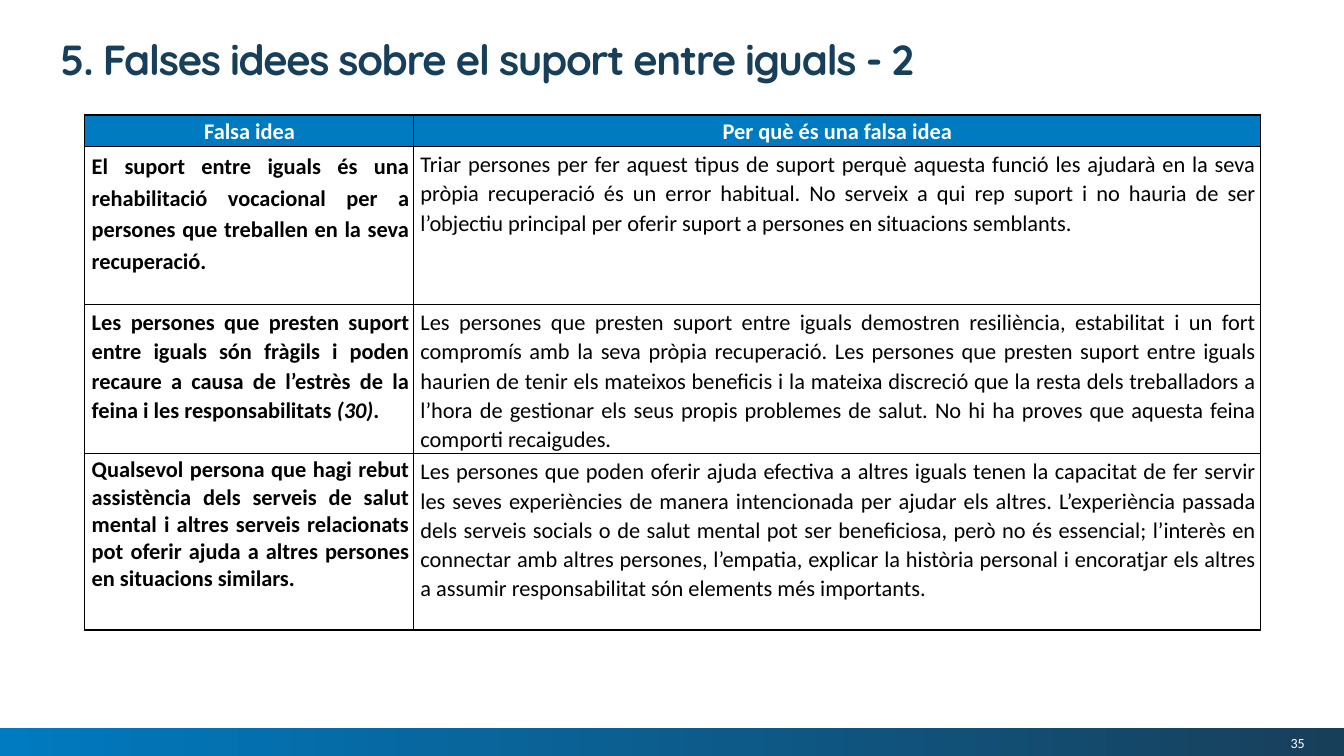
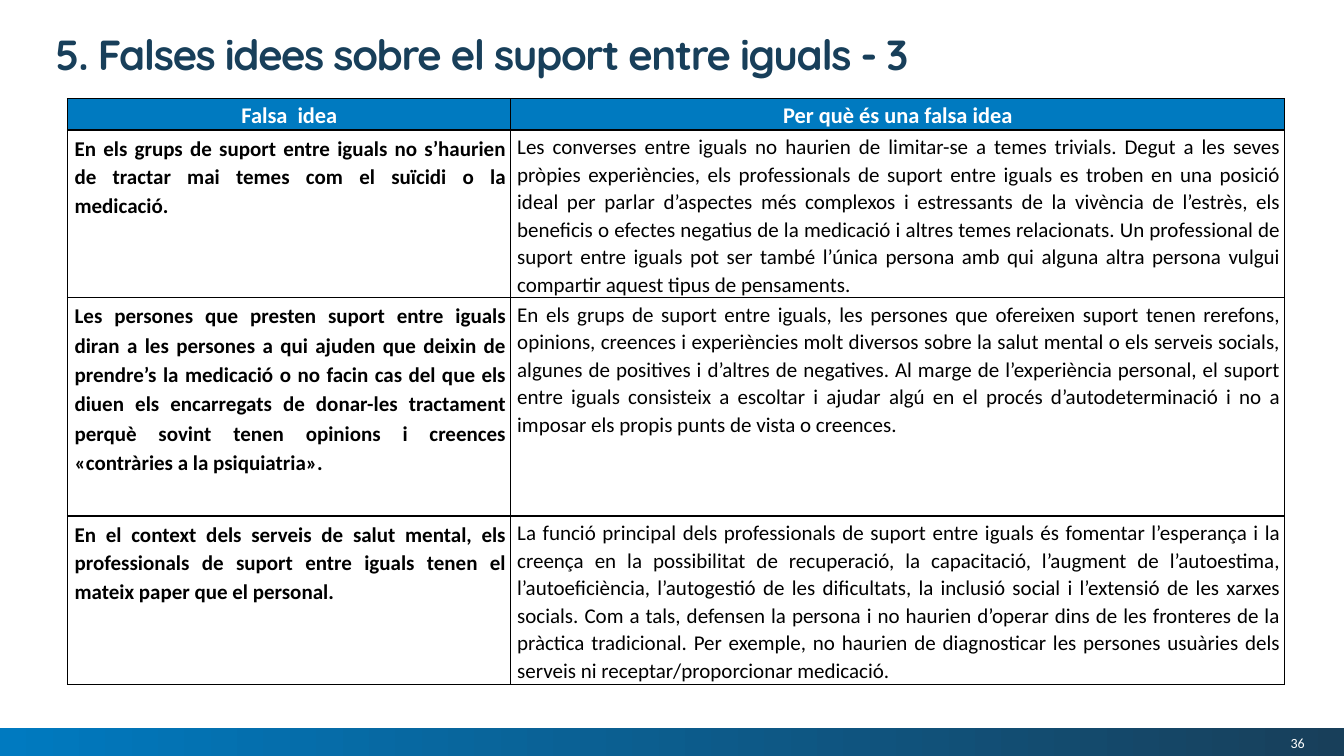
from pptx import Presentation
from pptx.dml.color import RGBColor
from pptx.enum.shapes import MSO_SHAPE as Shape
from pptx.enum.text import MSO_ANCHOR as Anchor, MSO_AUTO_SIZE as Auto, PP_ALIGN as Align
from pptx.oxml import parse_xml
from pptx.oxml.ns import nsdecls
from pptx.util import Inches, Pt

HUES = {"blue": "007AC0", "navy": "183F5A", "white": "FFFFFF", "black": "000000"}
BODY = "Calibri"
HEAD = "Quicksand"
WIDE, HIGH = 13.33, 7.5
BAND = 0.28

PAGES = [
    {
        "num": 35, "title": "5. Falses idees sobre el suport entre iguals - 2",
        "at": (0.5, 0.32), "grid": (0.84, 1.14), "size": 16,
        "cols": [3.26, 8.4], "rows": [0.31, 1.57, 1.48, 1.75],
        "heads": ["Falsa idea", "Per què és una falsa idea"],
        "gaps": [1.15, 1.07, 0.99],
        "body": [
            ("El suport entre iguals és una rehabilitació vocacional per a persones que treballen en la seva recuperació.",
             "Triar persones per fer aquest tipus de suport perquè aquesta funció les ajudarà en la seva pròpia recuperació és un error habitual. No serveix a qui rep suport i no hauria de ser l’objectiu principal per oferir suport a persones en situacions semblants."),
            ("Les persones que presten suport entre iguals són fràgils i poden recaure a causa de l’estrès de la feina i les responsabilitats *(30)*.",
             "Les persones que presten suport entre iguals demostren resiliència, estabilitat i un fort compromís amb la seva pròpia recuperació. Les persones que presten suport entre iguals haurien de tenir els mateixos beneficis i la mateixa discreció que la resta dels treballadors a l’hora de gestionar els seus propis problemes de salut. No hi ha proves que aquesta feina comporti recaigudes."),
            ("Qualsevol persona que hagi rebut assistència dels serveis de salut mental i altres serveis relacionats pot oferir ajuda a altres persones en situacions similars.",
             "Les persones que poden oferir ajuda efectiva a altres iguals tenen la capacitat de fer servir les seves experiències de manera intencionada per ajudar els altres. L’experiència passada dels serveis socials o de salut mental pot ser beneficiosa, però no és essencial; l’interès en connectar amb altres persones, l’empatia, explicar la història personal i encoratjar els altres a assumir responsabilitat són elements més importants."),
        ],
    },
    {
        "num": 36, "title": "5. Falses idees sobre el suport entre iguals - 3",
        "at": (0.45, 0.27), "grid": (0.67, 0.98), "size": 15,
        "cols": [4.39, 7.68], "rows": [0.31, 1.66, 2.17, 1.67],
        "heads": ["Falsa  idea", "Per què és una falsa idea"],
        "gaps": [1.12, 1.14, 1.12],
        "body": [
            ("En els grups de suport entre iguals no s’haurien de tractar mai temes com el suïcidi o la medicació.",
             "Les converses entre iguals no haurien de limitar-se a temes trivials. Degut a les seves pròpies experiències, els professionals de suport entre iguals es troben en una posició ideal per parlar d’aspectes més complexos i estressants de la vivència de l’estrès, els beneficis o efectes negatius de la medicació i altres temes relacionats. Un professional de suport entre iguals pot ser també l’única persona amb qui alguna altra persona vulgui compartir aquest tipus de pensaments."),
            ("Les persones que presten suport entre iguals diran a les persones a qui ajuden que deixin de prendre’s la medicació o no facin cas del que els diuen els encarregats de donar-les tractament perquè sovint tenen opinions i creences «contràries a la psiquiatria».",
             "En els grups de suport entre iguals, les persones que ofereixen suport tenen rerefons, opinions, creences i experiències molt diversos sobre la salut mental o els serveis socials, algunes de positives i d’altres de negatives. Al marge de l’experiència personal, el suport entre iguals consisteix a escoltar i ajudar algú en el procés d’autodeterminació i no a imposar els propis punts de vista o creences."),
            ("En el context dels serveis de salut mental, els professionals de suport entre iguals tenen el mateix paper que el personal.",
             "La funció principal dels professionals de suport entre iguals és fomentar l’esperança i la creença en la possibilitat de recuperació, la capacitació, l’augment de l’autoestima, l’autoeficiència, l’autogestió de les dificultats, la inclusió social i l’extensió de les xarxes socials. Com a tals, defensen la persona i no haurien d’operar dins de les fronteres de la pràctica tradicional. Per exemple, no haurien de diagnosticar les persones usuàries dels serveis ni receptar/proporcionar medicació."),
        ],
    },
]


def rgb(hue):
    return RGBColor.from_string(HUES[hue])


def style(para, face, size, hue, bold=False):
    font = para.font
    font.name, font.size, font.bold = face, Pt(size), bold
    font.color.rgb = rgb(hue)


def add_band(slide):
    band = slide.shapes.add_shape(
        Shape.RECTANGLE, 0, Inches(HIGH - BAND), Inches(WIDE), Inches(BAND))
    band.shadow.inherit = False
    band.line.fill.background()
    band.fill.gradient()
    band.fill.gradient_angle = 0
    for stop, hue in zip(band.fill.gradient_stops, ("blue", "navy")):
        stop.color.rgb = rgb(hue)


def add_num(slide, num):
    box = slide.shapes.add_textbox(Inches(11.14), Inches(7.25), Inches(1.8), Inches(0.24))
    frame = box.text_frame
    frame.word_wrap = True
    frame.vertical_anchor = Anchor.MIDDLE
    frame.margin_left = frame.margin_right = frame.margin_top = frame.margin_bottom = 0
    para = frame.paragraphs[0]
    para.text = str(num)
    para.alignment = Align.RIGHT
    style(para, BODY, 10, "white")


def set_title(slide, text, at):
    title = slide.shapes.title
    title.left, title.top = map(Inches, at)
    title.width, title.height = Inches(10.71), Inches(0.47)
    frame = title.text_frame
    frame.text = text
    frame.word_wrap = True
    frame.auto_size = Auto.NONE
    frame.vertical_anchor = Anchor.TOP
    para = frame.paragraphs[0]
    para.alignment = Align.LEFT
    para.line_spacing = Pt(33)
    style(para, HEAD, 30, "navy", True)
    para.runs[0].font.element.set("spc", "-100") if hasattr(para.runs[0].font, "element") else \
        para.runs[0]._r.get_or_add_rPr().set("spc", "-100")


def add_edges(cell):
    props = cell._tc.get_or_add_tcPr()
    for side in "LRTB":
        props.append(parse_xml(
            f'<a:ln{side} {nsdecls("a")} w="12700"><a:solidFill>'
            f'<a:srgbClr val="{HUES["black"]}"/></a:solidFill></a:ln{side}>'))


def fill_cell(cell, text, size, gap, head=False, bold=True):
    add_edges(cell)
    if head:
        cell.fill.solid()
        cell.fill.fore_color.rgb = rgb("blue")
    else:
        cell.fill.background()
    pads = (0.03, 0.01, 0.02, 0) if head else (0.07, 0.03, 0.04, 0)
    cell.margin_left, cell.margin_top, cell.margin_right, cell.margin_bottom = map(Inches, pads)
    para = cell.text_frame.paragraphs[0]
    para.alignment = Align.CENTER if head else Align.JUSTIFY
    para.line_spacing = gap
    style(para, BODY, size, "white" if head else "black", bold)
    for i, part in enumerate(text.split("*")):
        run = para.add_run()
        run.text = part
        if i % 2:
            run.font.italic = True


def add_grid(slide, page):
    cols, rows = page["cols"], page["rows"]
    left, top = page["grid"]
    grid = slide.shapes.add_table(
        len(rows), len(cols), Inches(left), Inches(top),
        Inches(sum(cols)), Inches(sum(rows))).table
    grid.horz_banding = False
    for col, width in zip(grid.columns, cols):
        col.width = Inches(width)
    for row, height in zip(grid.rows, rows):
        row.height = Inches(height)
    for j, text in enumerate(page["heads"]):
        fill_cell(grid.cell(0, j), text, 16, 1.07, head=True)
    for i, ((idea, why), gap) in enumerate(zip(page["body"], page["gaps"]), 1):
        fill_cell(grid.cell(i, 0), idea, page["size"], gap)
        fill_cell(grid.cell(i, 1), why, page["size"], 1.07, bold=False)


def main():
    deck = Presentation()
    deck.slide_width, deck.slide_height = Inches(WIDE), Inches(HIGH)
    for page in PAGES:
        slide = deck.slides.add_slide(deck.slide_layouts[5])
        add_band(slide)
        add_num(slide, page["num"])
        set_title(slide, page["title"], page["at"])
        add_grid(slide, page)
    deck.save("out.pptx")


if __name__ == "__main__":
    main()
